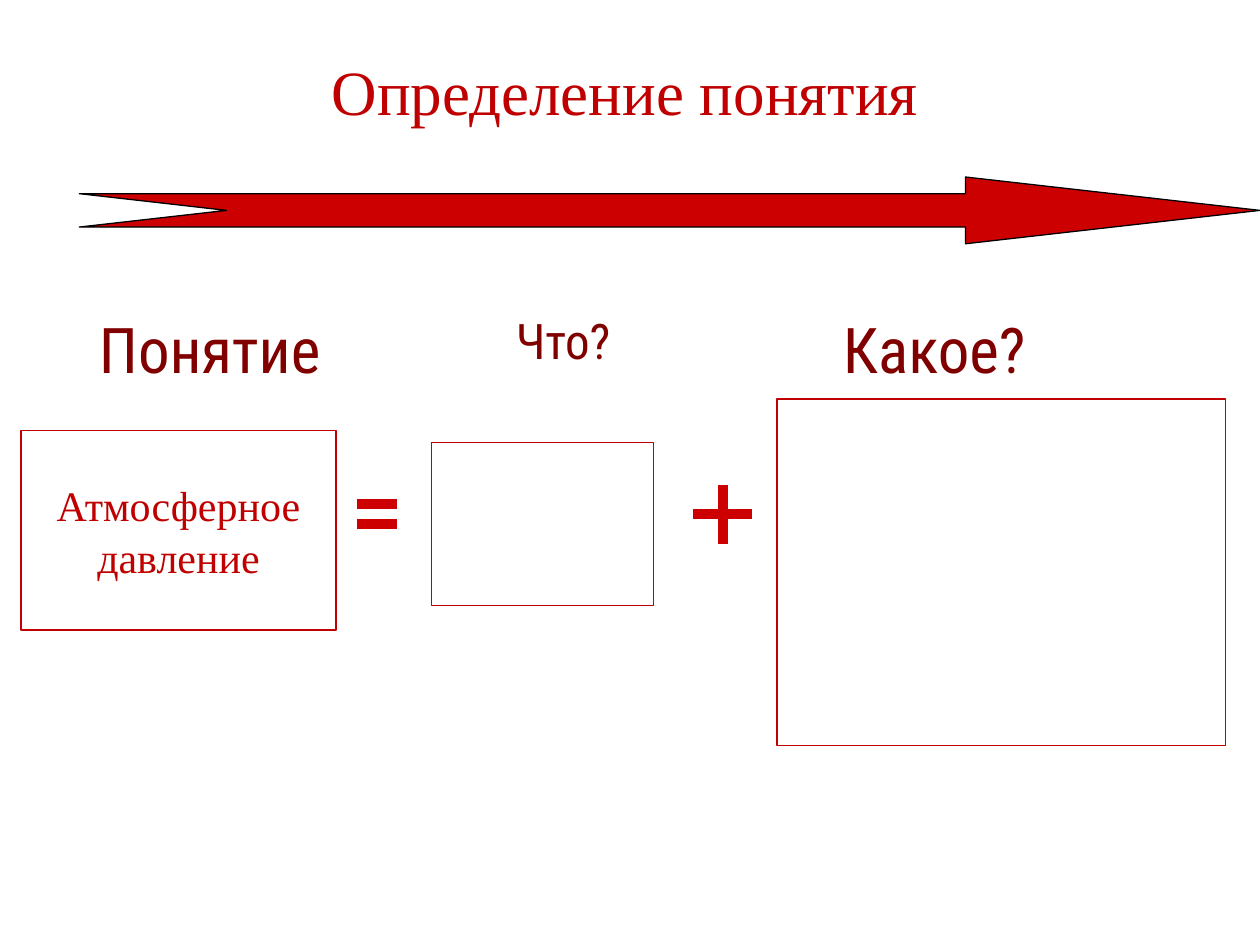
from lxml.etree import SubElement
from pptx import Presentation
from pptx.dml.color import RGBColor
from pptx.enum.shapes import MSO_CONNECTOR as Connector, MSO_SHAPE as Shape
from pptx.enum.text import MSO_ANCHOR as Anchor, PP_ALIGN as Align
from pptx.oxml.ns import qn
from pptx.util import Inches, Pt

SERIF, SANS = "Times New Roman", "Roboto Condensed"
CRIMSON, RED, MAROON = "C00000", "CC0000", "800000"
color = RGBColor.from_string

deck = Presentation()
deck.slide_width, deck.slide_height = Inches(10), Inches(7.5)
page = deck.slides.add_slide(deck.slide_layouts[5])
CELL = deck.slide_width / 100  # grid of 100 columns by 75 rows


def grid(*cells):
    return [round(cell * CELL) for cell in cells]


def write(box, lines, font, size, ink, anchor=Anchor.TOP, spacing=1.0):
    frame = box.text_frame
    frame.word_wrap = False
    frame.vertical_anchor = anchor
    frame.margin_left = frame.margin_right = 0
    for index, line in enumerate(lines):
        para = frame.add_paragraph() if index else frame.paragraphs[0]
        para.alignment = Align.CENTER
        para.line_spacing = spacing
        span = para.add_run()
        span.text = line
        span.font.name = font
        span.font.size = Pt(size)
        span.font.color.rgb = color(ink)


# Title
title = page.shapes.title
title.left, title.top, title.width, title.height = grid(24, 3.6, 51.2, 8.3)
write(title, ["Определение понятия"], SERIF, 36, CRIMSON, Anchor.MIDDLE)
title.text_frame.margin_bottom = Inches(0.16)

# Column headings
for text, left, width, height, size in [
    ("Понятие", 7.5, 18.3, 6.2, 36),
    ("Что?", 39.2, 11, 7.1, 28),
    ("Какое?", 65, 18.3, 6.2, 36),
]:
    heading = page.shapes.add_textbox(*grid(left, 24.15, width, height))
    write(heading, [text], SANS, size, MAROON)

# Arrow across the slide, then the three boxes of the definition
NOTCHED, RECT = Shape.NOTCHED_RIGHT_ARROW, Shape.RECTANGLE
for kind, place, fill, line, lines in [
    (NOTCHED, (6.3, 14.05, 93.7, 5.3), RED, "000000", []),
    (RECT, (1.67, 34.17, 25, 15.83), "FFFFFF", CRIMSON, ["Атмосферное", "давление"]),
    (RECT, (34.25, 35.1, 17.6, 12.95), "FFFFFF", CRIMSON, []),
    (RECT, (61.67, 31.67, 35.6, 27.5), "FFFFFF", CRIMSON, []),
]:
    shape = page.shapes.add_shape(kind, *grid(*place))
    shape.shadow.inherit = False
    shape.fill.solid()
    shape.fill.fore_color.rgb = color(fill)
    shape.line.color.rgb = color(line)
    shape.line.width = Pt(0.75)
    if kind == NOTCHED:
        shape.adjustments[0], shape.adjustments[1] = 0.5, 4.41
    if lines:
        write(shape, lines, SERIF, 24, CRIMSON, Anchor.MIDDLE, 1.03)

# Equals and plus signs
for ends in [
    (28.3, 40, 31.5, 40),
    (28.3, 41.6, 31.5, 41.6),
    (57.4, 38.5, 57.4, 43.2),
    (55, 40.8, 59.7, 40.8),
]:
    stroke = page.shapes.add_connector(Connector.STRAIGHT, *grid(*ends))
    stroke.line.color.rgb = color(RED)
    stroke.line.width = Pt(6)
    SubElement(stroke._element.spPr, qn("a:effectLst"))

deck.save("out.pptx")
